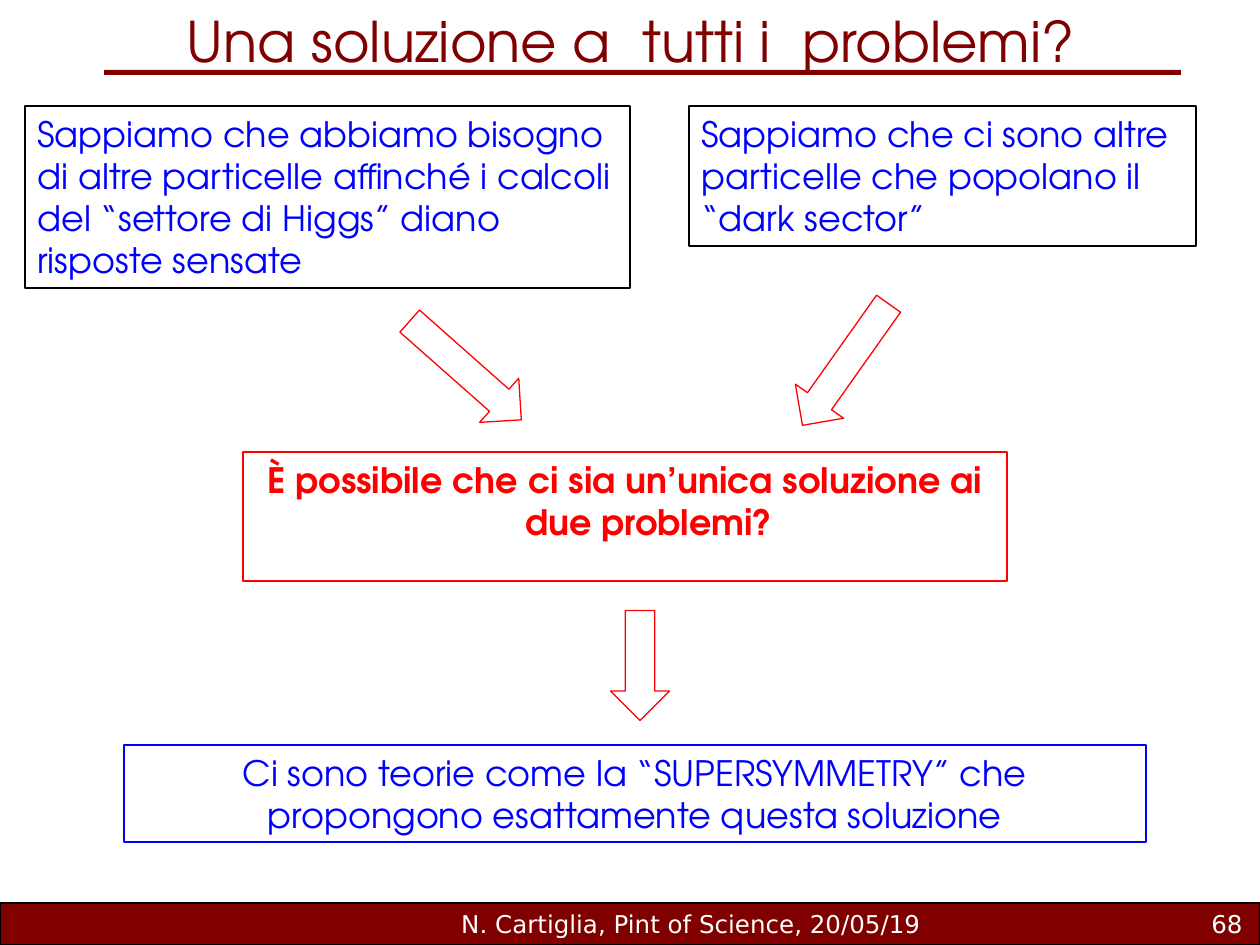
from pptx import Presentation
from pptx.dml.color import RGBColor
from pptx.enum.shapes import MSO_SHAPE as Shape
from pptx.enum.text import MSO_ANCHOR as Anchor, PP_ALIGN as Align
from pptx.util import Emu, Pt

EMU_PER_PX = 914400 / 126
MAROON = RGBColor(0x80, 0x00, 0x00)
RED = RGBColor(0xFF, 0x00, 0x00)
BLUE = RGBColor(0x00, 0x00, 0xFF)
BLACK = RGBColor(0x00, 0x00, 0x00)
WHITE = RGBColor(0xFF, 0xFF, 0xFF)
HEADING_FONT = "TeX Gyre Adventor"
FOOTER_FONT = "DejaVu Sans"


def px(*lengths):
    return [Emu(round(length * EMU_PER_PX)) for length in lengths]


def add_text(text, box, size=20, font=HEADING_FONT, color=BLUE, bold=False,
             align=Align.LEFT, anchor=Anchor.TOP, outline=None, hanging=0):
    label = slide.shapes.add_textbox(*px(*box))
    if outline is not None:
        label.line.color.rgb = outline
        label.line.width = Pt(0.75)
    frame = label.text_frame
    frame.word_wrap = True
    frame.vertical_anchor = anchor
    paragraph = frame.paragraphs[0]
    paragraph.alignment = align
    if hanging:
        indent = px(hanging)[0]
        properties = paragraph._p.get_or_add_pPr()
        properties.set("marL", str(indent))
        properties.set("indent", str(-indent))
    run = paragraph.add_run()
    run.text = text
    run.font.size = Pt(size)
    run.font.name = font
    run.font.bold = bold
    run.font.color.rgb = color


prs = Presentation()
prs.slide_width, prs.slide_height = px(1260, 945)
slide = prs.slides.add_slide(prs.slide_layouts[6])

# Footer band and title rule
for bar, edge in [((0, 903, 1260, 42), BLACK), ((104, 70, 1077, 5), None)]:
    band = slide.shapes.add_shape(Shape.RECTANGLE, *px(*bar))
    band.shadow.inherit = False
    band.fill.solid()
    band.fill.fore_color.rgb = MAROON
    if edge is None:
        band.line.fill.background()
    else:
        band.line.color.rgb = edge
        band.line.width = Pt(0.75)

# Title
add_text("Una soluzione a  tutti i  problemi?", (64, 0, 1134, 76),
         size=32, color=MAROON, align=Align.CENTER)

# Footer text
add_text("N. Cartiglia, Pint of Science, 20/05/19", (432, 903, 518, 42), size=14,
         font=FOOTER_FONT, color=WHITE, align=Align.CENTER, anchor=Anchor.MIDDLE)
add_text("68", (993, 903, 262, 42), size=14,
         font=FOOTER_FONT, color=WHITE, align=Align.RIGHT, anchor=Anchor.MIDDLE)

# The two problems
add_text("Sappiamo che abbiamo bisogno di altre particelle affinché i calcoli "
         "del “settore di Higgs” diano risposte sensate",
         (25, 106, 605, 182), outline=BLACK)
add_text("Sappiamo che ci sono altre particelle che popolano il “dark sector”",
         (689, 106, 507, 140), outline=BLACK)

# The question and its answer
add_text("È possibile che ci sia un’unica soluzione ai due problemi?",
         (243, 452, 764, 129), color=RED, bold=True, align=Align.CENTER,
         outline=RED, hanging=48)
add_text("Ci sono teorie come la “SUPERSYMMETRY” che propongono esattamente "
         "questa soluzione",
         (124, 745, 1022, 97), align=Align.CENTER, outline=BLUE)

# Arrows from the problems to the question, and on to the answer
for left, top, length, angle in [(391, 341, 149, 41.5),
                                 (771, 335, 149, 125.3),
                                 (585, 636, 110, 90)]:
    arrow = slide.shapes.add_shape(Shape.RIGHT_ARROW, *px(left, top, length, 59))
    arrow.shadow.inherit = False
    arrow.rotation = angle
    arrow.fill.background()
    arrow.line.color.rgb = RED
    arrow.line.width = Pt(0.75)

prs.save("out.pptx")
